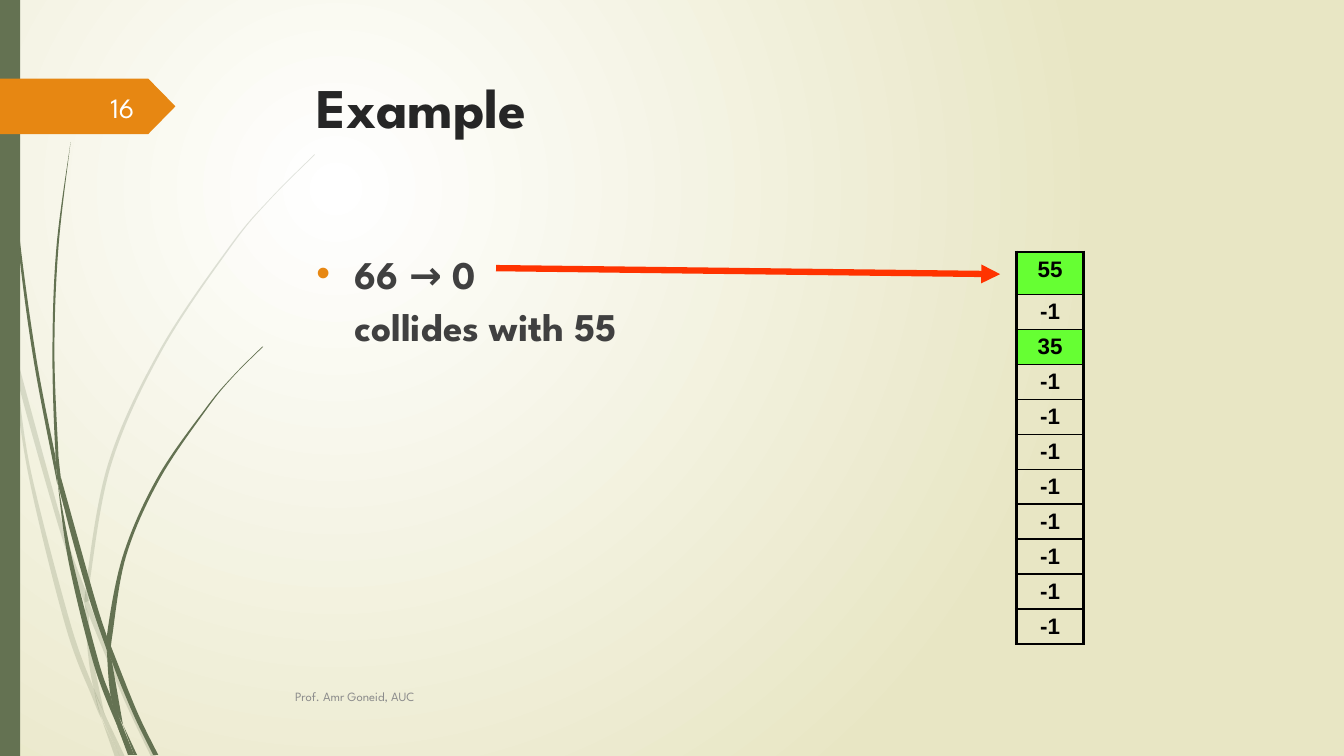
from lxml import etree
from pptx import Presentation
from pptx.dml.color import RGBColor
from pptx.enum.shapes import MSO_CONNECTOR, MSO_SHAPE
from pptx.enum.text import MSO_ANCHOR, PP_ALIGN
from pptx.oxml.ns import qn
from pptx.util import Inches, Pt

RECT, PLATE = MSO_SHAPE.RECTANGLE, MSO_SHAPE.PENTAGON
STRAIGHT = MSO_CONNECTOR.STRAIGHT
TOP, MIDDLE = MSO_ANCHOR.TOP, MSO_ANCHOR.MIDDLE
LEFT, CENTER, RIGHT = PP_ALIGN.LEFT, PP_ALIGN.CENTER, PP_ALIGN.RIGHT
FONT = "League Spartan"
COLORS = {
    "white": "FFFFFF", "sand": "E8E6C4", "moss": "647252", "orange": "E78712",
    "title": "262626", "body": "404040", "foot": "8C8C8C", "number": "FEFFFF",
    "black": "000000", "green": "66FF33", "red": "FF3300",
}
SLOTS = [55, -1, 35] + [-1] * 8

# Each piece of grass has two curved edges, one down and one back up.
PALE = [
    ([(0, 2.82), (.09, 3.22), (.11, 3.5)], [(.1, 3.44), (0, 2.99)]),
    ([(.14, 3.45), (.17, 3.76), (.58, 5.22), (.84, 5.99)],
     [(.85, 5.86), (.62, 5.2), (.14, 3.45)]),
    ([(.88, 5.96), (.92, 6.07), (1.27, 6.92), (1.55, 7.51)],
     [(1.5, 7.51), (1.23, 6.94), (.88, 6.1)]),
    ([(1.05, 7.11), (1.24, 7.51)], [(1.19, 7.51), (1.05, 7.11)]),
    ([(.11, 3.5), (.28, 4.7), (.65, 6.21), (.92, 6.93), (1.01, 7.14)],
     [(.93, 6.83), (.7, 6.19), (.31, 4.69), (.17, 3.76), (.11, 3.5)]),
    ([(.84, 5.99), (.87, 6.46), (.93, 6.83), (1.05, 7.11)],
     [(1.03, 7.06), (.91, 6.46), (.88, 6.1)]),
    ([(3.12, 1.53), (2.68, 1.97), (2.28, 2.44), (1.58, 3.48), (1.07, 4.61),
      (.85, 5.84), (.88, 5.96)],
     [(.88, 5.84), (1.1, 4.62), (1.6, 3.49), (2.29, 2.45), (2.68, 1.98),
      (3.12, 1.54)]),
    ([(1.01, 7.14), (1.14, 7.51)], [(1.19, 7.51), (1.01, 7.14)]),
    ([(.85, 5.86), (.84, 5.99), (.88, 6.1)], [(.88, 5.96), (.85, 5.86)]),
    ([(.93, 6.83), (.99, 7.07), (1.19, 7.51)], [(1.05, 7.11), (.93, 6.83)]),
]
DARK = [
    ([(.03, 0), (.07, 1.1), (.17, 2.33), (.33, 3.55), (.57, 4.81)],
     [(.55, 4.53), (.36, 3.55), (.19, 2.32), (.08, 1.09), (.04, 0)]),
    ([(.6, 4.72), (.64, 5.05), (.88, 5.92), (1.06, 6.45)],
     [(1.06, 6.31), (.93, 5.9), (.6, 4.72)]),
    ([(1.1, 6.41), (1.11, 6.56), (1.32, 7.08), (1.52, 7.49)],
     [(1.57, 7.49), (1.36, 7.06), (1.1, 6.41)]),
    ([(.57, 4.77), (.68, 5.57), (.93, 6.59), (1.17, 7.22)],
     [(1.1, 6.91), (.98, 6.57), (.72, 5.56), (.57, 4.77)]),
    ([(.7, 1.41), (.56, 2.45), (.52, 3.49), (.55, 4.49), (.6, 4.72)],
     [(.58, 4.53), (.54, 3.49), (.58, 2.45), (.7, 1.41)]),
    ([(1.22, 7.19), (1.33, 7.49)], [(1.36, 7.49), (1.22, 7.19)]),
    ([(.55, 4.49), (.57, 4.77), (.64, 5.05)], [(.6, 4.72), (.55, 4.49)]),
    ([(2.6, 3.44), (2.31, 3.73), (2.04, 4.05), (1.56, 4.74), (1.22, 5.51),
      (1.06, 6.31), (1.1, 6.41)],
     [(1.11, 6.33), (1.25, 5.52), (1.58, 4.76), (2.05, 4.06), (2.31, 3.74),
      (2.61, 3.44)]),
    ([(1.17, 7.22), (1.27, 7.49)], [(1.31, 7.49), (1.17, 7.22)]),
    ([(1.06, 6.45), (1.1, 6.91), (1.22, 7.19)], [(1.11, 6.56), (1.06, 6.45)]),
    ([(1.06, 6.31), (1.06, 6.45), (1.11, 6.56)], [(1.1, 6.41), (1.06, 6.31)]),
    ([(1.1, 6.91), (1.17, 7.22), (1.3, 7.49)], [(1.33, 7.49), (1.1, 6.91)]),
]


def rgb(name):
    return RGBColor.from_string(COLORS[name])


def sub(parent, tag, **attrs):
    return etree.SubElement(parent, qn(tag), attrs)


def write(frame, text, size=16, color="black", font=FONT, bold=False,
          align=LEFT, anchor=TOP):
    """Put each line of the text in its own paragraph, in one format."""
    frame.word_wrap = True
    frame.vertical_anchor = anchor
    frame.text = text
    for para in frame.paragraphs:
        para.alignment = align
        face = para.runs[0].font
        face.name, face.size, face.bold = font, Pt(size), bold
        face.color.rgb = rgb(color)


def label(slide, box, text, **style):
    frame = slide.shapes.add_textbox(*map(Inches, box)).text_frame
    write(frame, text, **style)
    return frame


def paint(shape, color):
    shape.shadow.inherit = False
    shape.fill.solid()
    shape.fill.fore_color.rgb = rgb(color)
    shape.line.fill.background()


def bend(shape, edges):
    """Turn the straight segments along each edge into cubic curves."""
    lines = iter(list(shape._element.iter(qn("a:lnTo"))))
    for k, edge in enumerate(edges):
        if k:
            next(lines)
        ends = [edge[0], *edge, edge[-1]]
        for a, b, c, d in zip(ends, ends[1:], ends[2:], ends[3:]):
            line = next(lines)
            line.tag = qn("a:cubicBezTo")
            near = [q + (r - p) / 6 for p, q, r in zip(a, b, c)]
            far = [r - (s - q) / 6 for q, r, s in zip(b, c, d)]
            for spot, (x, y) in enumerate((near, far)):
                point = sub(line, "a:pt", x=str(Inches(x) - shape.left),
                            y=str(Inches(y) - shape.top))
                line.insert(spot, point)


def backdrop(slide):
    fill = slide.background.fill
    fill.gradient()
    for stop, name, place in zip(fill.gradient_stops, ("white", "sand"), (0, 1)):
        stop.color.rgb = rgb(name)
        stop.position = place
    grad = slide.element.find(".//" + qn("a:gradFill"))
    for line in grad.findall(qn("a:lin")):
        grad.remove(line)
    ring = sub(grad, "a:path", path="circle")
    sub(ring, "a:fillToRect", l="50000", t="50000", r="100000", b="100000")


def grass(slide, x, y, pieces, alpha=100):
    for piece in pieces:
        edges = [[(x + px, y + py) for px, py in edge] for edge in piece]
        spots = [tuple(map(Inches, spot)) for spot in edges[0] + edges[1]]
        pen = slide.shapes.build_freeform(*spots[0])
        pen.add_line_segments(spots[1:], close=False)
        blade = pen.convert_to_shape()
        bend(blade, edges)
        sub(blade._element.find(".//" + qn("a:path")), "a:close")
        paint(blade, "moss")
        if alpha < 100:
            tint = blade._element.spPr.find(".//" + qn("a:srgbClr"))
            sub(tint, "a:alpha", val=str(alpha * 1000))


def margin(slide, x, y, height):
    """Draw the grass, the side bar and the page number tag."""
    grass(slide, x, y, PALE, alpha=20)
    grass(slide, x, y, DARK)
    bar = slide.shapes.add_shape(RECT, *map(Inches, (x, y, .2, height)))
    paint(bar, "moss")
    tag = slide.shapes.add_shape(PLATE, *map(Inches, (x, y + .78, 1.74, .55)))
    tag.adjustments[0] = .49
    paint(tag, "orange")
    label(slide, (x + .58, y + .86, .85, .4), "16", size=20, color="number",
          align=RIGHT, anchor=MIDDLE)


def title(slide, box, text):
    head = slide.shapes.title
    head.left, head.top, head.width, head.height = map(Inches, box)
    write(head.text_frame, text, size=40, color="title", bold=True)


def body(slide, box):
    frame = label(slide, box, "66 → 0\ncollides with 55", size=28, color="body",
                  bold=True)
    first, second = frame.paragraphs
    second.space_before = Pt(10.5)
    for para, hang in ((first, -.38), (second, 0)):
        para.line_spacing = .8
        props = para._p.get_or_add_pPr()
        props.set("marL", str(Inches(.38)))
        props.set("indent", str(Inches(hang)))
    props = first._p.pPr
    sub(sub(props, "a:buClr"), "a:srgbClr", val=COLORS["orange"])
    sub(props, "a:buFont", typeface="Arial")
    sub(props, "a:buChar", char="•")


def border(cell, widths):
    props = cell._tc.get_or_add_tcPr()
    for side, width in zip("LRTB", widths):
        line = sub(props, "a:ln" + side, w=str(Pt(width)))
        sub(sub(line, "a:solidFill"), "a:srgbClr", val=COLORS["black"])


def slots(slide, box):
    """Draw the hash table, with the used slots in green."""
    last = len(SLOTS) - 1
    grid = slide.shapes.add_table(last + 1, 1, *map(Inches, box)).table
    grid.first_row = grid.horz_banding = False
    for i, value in enumerate(SLOTS):
        grid.rows[i].height = Inches(.34 if i else .42)
        cell = grid.cell(i, 0)
        border(cell, (2.25, 2.25, 1 if i else 2.25, 2.25 if i == last else 1))
        if value < 0:
            cell.fill.background()
        else:
            cell.fill.solid()
            cell.fill.fore_color.rgb = rgb("green")
        cell.margin_bottom = Inches(.03)
        write(cell.text_frame, str(value), font="Arial", bold=True, align=CENTER)


def arrow(slide, start, end):
    link = slide.shapes.add_connector(STRAIGHT, *map(Inches, start + end))
    link.line.color.rgb = rgb("red")
    link.line.width = Pt(4.5)
    sub(link.line._get_or_add_ln(), "a:tailEnd", type="triangle")
    sub(link._element.spPr, "a:effectLst")


def main():
    deck = Presentation()
    deck.slide_width, deck.slide_height = Inches(13.33), Inches(7.5)
    slide = deck.slides.add_slide(deck.slide_layouts[5])
    backdrop(slide)
    margin(slide, 0, 0, 7.5)
    title(slide, (3.04, .67, 8.5, 1.17), "Example")
    body(slide, (3.04, 2.52, 8.5, 4.14))
    label(slide, (2.83, 6.71, 8.33, .4), "Prof. Amr Goneid, AUC", size=9,
          color="foot", anchor=MIDDLE)
    slots(slide, (10.08, 2.5, .67, 3.82))
    arrow(slide, (4.92, 2.66), (9.92, 2.72))
    deck.save("out.pptx")


if __name__ == "__main__":
    main()
